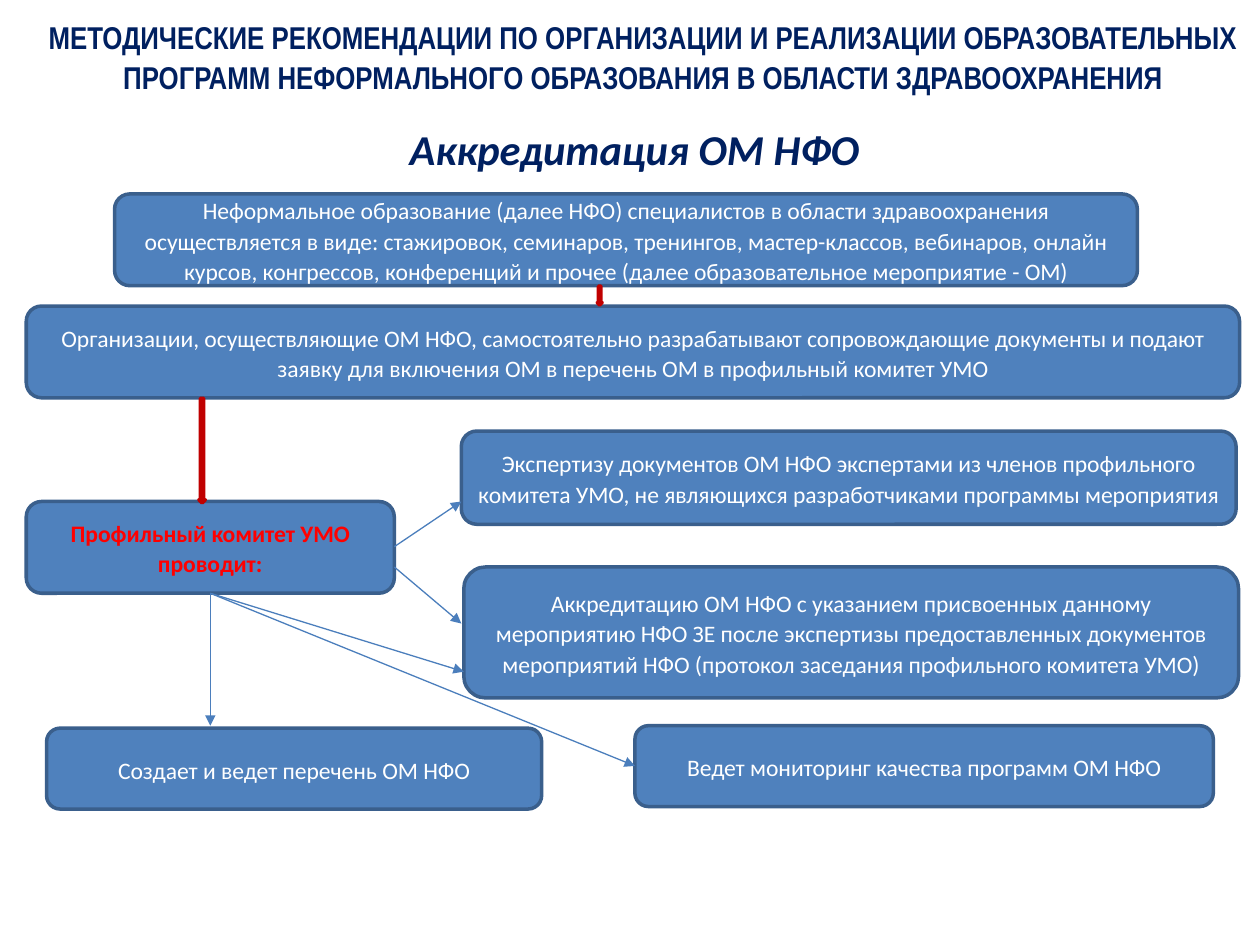
from lxml.etree import SubElement
from pptx import Presentation
from pptx.dml.color import RGBColor
from pptx.enum.shapes import MSO_CONNECTOR as Connector, MSO_SHAPE as Shape
from pptx.enum.text import MSO_ANCHOR as Anchor, PP_ALIGN as Align
from pptx.oxml.ns import qn
from pptx.util import Cm, Pt

COLORS = {
    "navy": "002060",
    "box": "4F81BD",
    "border": "3A5F8C",
    "arrow": "C00000",
    "line": "4B7EBC",
    "white": "FFFFFF",
    "red": "FF0000",
}


def write_text(shape, text, size=13.5, font="Calibri", color="white", bold=False,
               italic=False, anchor=Anchor.MIDDLE, spacing=1.07, before=0, after=0, inset=0.25):
    frame = shape.text_frame
    frame.word_wrap = True
    frame.vertical_anchor = anchor
    frame.margin_left = frame.margin_right = Cm(inset)
    paragraph = frame.paragraphs[0]
    paragraph.alignment = Align.CENTER
    paragraph.line_spacing = spacing
    paragraph.space_before = Pt(before)
    paragraph.space_after = Pt(after)
    run = paragraph.add_run()
    run.text = text
    run.font.name = font
    run.font.size = Pt(size)
    run.font.bold = bold
    run.font.italic = italic
    run.font.color.rgb = RGBColor.from_string(COLORS[color])


def add_filled_shape(kind, position, border):
    shape = slide.shapes.add_shape(kind, *map(Cm, position))
    shape.shadow.inherit = False
    shape.fill.solid()
    shape.fill.fore_color.rgb = RGBColor.from_string(COLORS["box"])
    shape.line.color.rgb = RGBColor.from_string(COLORS[border])
    shape.line.width = Pt(2)
    return shape


presentation = Presentation()
presentation.slide_width = Cm(25.4)
presentation.slide_height = Cm(19.05)
slide = presentation.slides.add_slide(presentation.slide_layouts[6])

title = slide.shapes.add_textbox(Cm(1.85), Cm(2.31), Cm(21.89), Cm(1.35))
write_text(title, "Аккредитация ОМ НФО", size=24.3, color="navy", bold=True, italic=True, spacing=1.0)

boxes = [
    ((2.31, 3.91, 20.62, 1.85),
     "Неформальное образование (далее НФО) специалистов в области здравоохранения "
     "осуществляется в виде: стажировок, семинаров, тренингов, мастер-классов, вебинаров, "
     "онлайн курсов, конгрессов, конференций и прочее (далее образовательное мероприятие - ОМ)"),
    ((0.53, 6.17, 24.46, 1.85),
     "Организации, осуществляющие ОМ НФО, самостоятельно разрабатывают сопровождающие "
     "документы и подают заявку для включения ОМ в перечень ОМ в профильный комитет УМО"),
    ((9.3, 8.69, 15.62, 1.88),
     "Экспертизу документов ОМ НФО экспертами из членов профильного комитета УМО, "
     "не являющихся разработчиками программы мероприятия"),
    ((9.35, 11.43, 15.62, 2.64),
     "Аккредитацию ОМ НФО с указанием присвоенных данному мероприятию НФО ЗЕ после "
     "экспертизы предоставленных документов мероприятий НФО "
     "(протокол заседания профильного комитета УМО)"),
    ((12.8, 14.63, 11.66, 1.63), "Ведет мониторинг качества программ ОМ НФО"),
    ((0.94, 14.68, 9.98, 1.63), "Создает и ведет перечень ОМ НФО"),
]
for position, text in boxes:
    box = add_filled_shape(Shape.ROUNDED_RECTANGLE, position, "border")
    write_text(box, text, after=6, inset=0.19)

committee = add_filled_shape(Shape.ROUNDED_RECTANGLE, (0.53, 10.11, 7.42, 1.85), "border")
write_text(committee, "Профильный комитет УМО проводит:", color="red", bold=True, after=6, inset=0.19)

for position in [(12.04, 5.77, 0.1, 0.38), (4.01, 8.03, 0.13, 2.11)]:
    add_filled_shape(Shape.DOWN_ARROW, position, "arrow")

committee_bottom = (4.24, 11.96)
links = [
    (committee_bottom, (9.35, 13.54)),
    (committee_bottom, (4.24, 14.63)),
    ((7.95, 11.02), (9.3, 10.11)),
    ((7.95, 11.43), (9.3, 12.57)),
    (committee_bottom, (12.8, 15.44)),
]
for start, end in links:
    connector = slide.shapes.add_connector(Connector.STRAIGHT, *map(Cm, start + end))
    connector.line.color.rgb = RGBColor.from_string(COLORS["line"])
    connector.line.width = Pt(0.75)
    SubElement(connector.line._get_or_add_ln(), qn("a:tailEnd"), type="triangle")
    SubElement(connector._element.spPr, qn("a:effectLst"))

heading = slide.shapes.add_textbox(Cm(0.53), Cm(0.18), Cm(24.87), Cm(1.83))
write_text(heading,
           "МЕТОДИЧЕСКИЕ РЕКОМЕНДАЦИИ ПО ОРГАНИЗАЦИИ И РЕАЛИЗАЦИИ ОБРАЗОВАТЕЛЬНЫХ "
           "ПРОГРАММ НЕФОРМАЛЬНОГО ОБРАЗОВАНИЯ В ОБЛАСТИ ЗДРАВООХРАНЕНИЯ",
           size=18, font="Arial Narrow", color="navy", bold=True, anchor=Anchor.TOP, before=12)

presentation.save("out.pptx")
